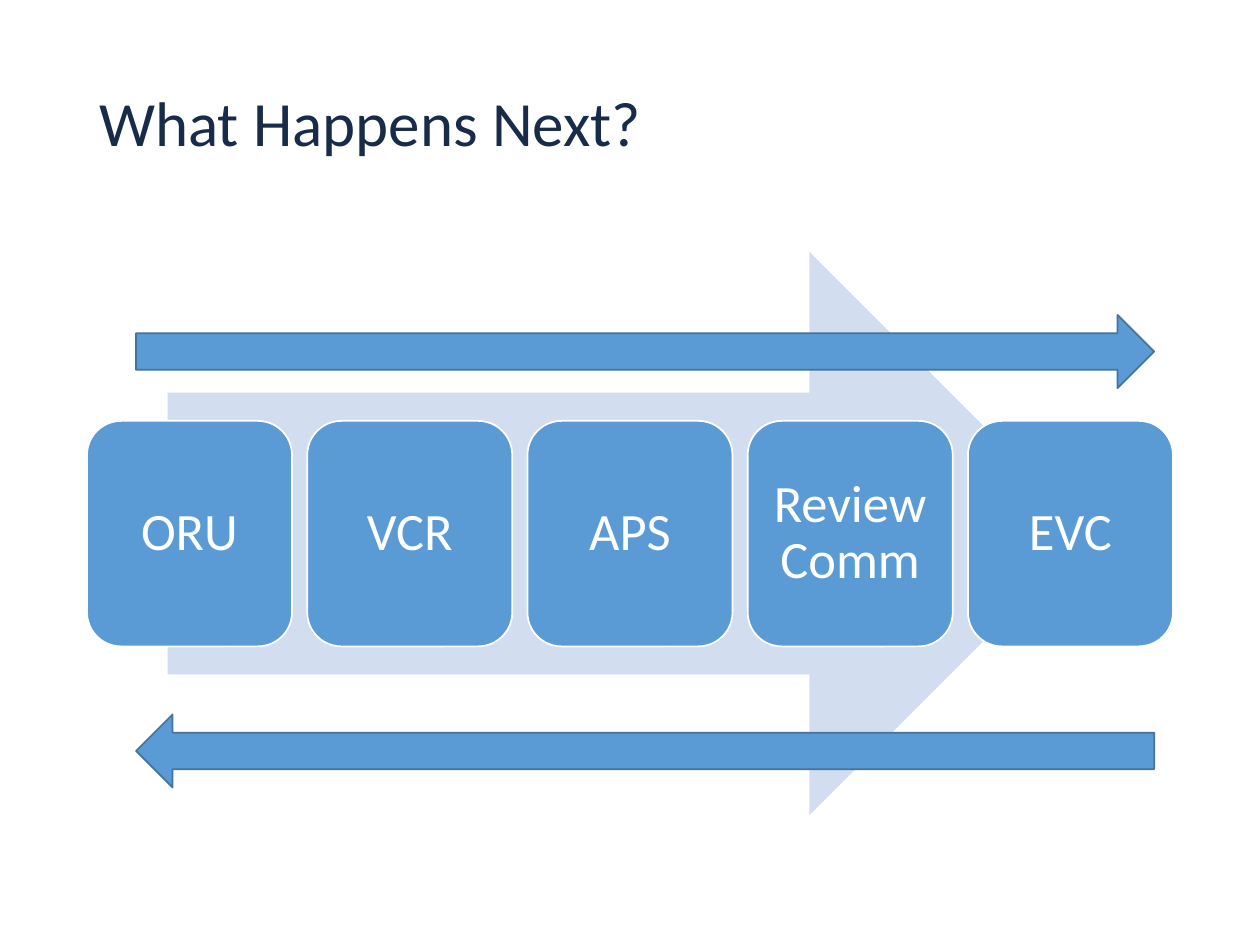
from pptx import Presentation
from pptx.dml.color import RGBColor
from pptx.enum.shapes import MSO_SHAPE as Shape
from pptx.enum.text import MSO_ANCHOR as Anchor, PP_ALIGN as Align
from pptx.util import Inches, Pt

COLORS = {
    "title": "182B49",
    "backdrop": "D2DEEF",
    "step": "5B9BD5",
    "outline": "43739E",
    "white": "FFFFFF",
}
COLUMNS, ROWS = 100, 75
MARGIN = 6.9
CONTENT_WIDTH = COLUMNS - 2 * MARGIN
STEPS = ["ORU", "VCR", "APS", "Review Comm", "EVC"]
STEP_GAP = 1.2
STEP_WIDTH = (CONTENT_WIDTH - STEP_GAP * (len(STEPS) - 1)) / len(STEPS)


class SlideBuilder:
    """Draws on one slide; lengths are columns and rows of its grid."""

    font_name = "Calibri"
    line_spacing = 0.9

    def __init__(self, presentation):
        self.slide = presentation.slides.add_slide(presentation.slide_layouts[6])
        self.column = presentation.slide_width / COLUMNS
        self.row = presentation.slide_height / ROWS

    def place(self, left, top, width, height):
        return (round(left * self.column), round(top * self.row),
                round(width * self.column), round(height * self.row))

    def set_text(self, text_frame, text, size, color, align):
        text_frame.word_wrap = True
        text_frame.text = text
        paragraph = text_frame.paragraphs[0]
        paragraph.alignment = align
        paragraph.line_spacing = self.line_spacing
        font = paragraph.runs[0].font
        font.name = self.font_name
        font.size = Pt(size)
        font.color.rgb = RGBColor.from_string(COLORS[color])

    def title(self, text, *box):
        textbox = self.slide.shapes.add_textbox(*self.place(*box))
        self.set_text(textbox.text_frame, text, 36, "title", Align.LEFT)

    def block(self, kind, box, fill, line=None):
        shape = self.slide.shapes.add_shape(kind, *self.place(*box))
        shape.shadow.inherit = False
        shape.fill.solid()
        shape.fill.fore_color.rgb = RGBColor.from_string(COLORS[fill])
        if line:
            shape.line.color.rgb = RGBColor.from_string(COLORS[line])
            shape.line.width = Pt(1)
        else:
            shape.line.fill.background()
        return shape

    def step(self, text, *box):
        shape = self.block(Shape.ROUNDED_RECTANGLE, box, "step", "white")
        frame = shape.text_frame
        frame.vertical_anchor = Anchor.MIDDLE
        frame.margin_left = frame.margin_right = Inches(0.12)
        frame.margin_top = frame.margin_bottom = Inches(0.12)
        self.set_text(frame, text, 30, "white", Align.CENTER)


def main():
    presentation = Presentation()
    presentation.slide_width = Inches(10)
    presentation.slide_height = Inches(7.5)

    builder = SlideBuilder(presentation)
    builder.title("What Happens Next?", MARGIN, 6.8, CONTENT_WIDTH, 11.5)
    builder.block(Shape.RIGHT_ARROW, (13.3, 20, 73.3, 44.7), "backdrop")
    for index, name in enumerate(STEPS):
        left = MARGIN + index * (STEP_WIDTH + STEP_GAP)
        builder.step(name, left, 33.4, STEP_WIDTH, 17.9)
    for kind, top in ((Shape.RIGHT_ARROW, 25), (Shape.LEFT_ARROW, 56.7)):
        builder.block(kind, (10.8, top, 80.8, 5.8), "step", "outline")

    presentation.save("out.pptx")


if __name__ == "__main__":
    main()
